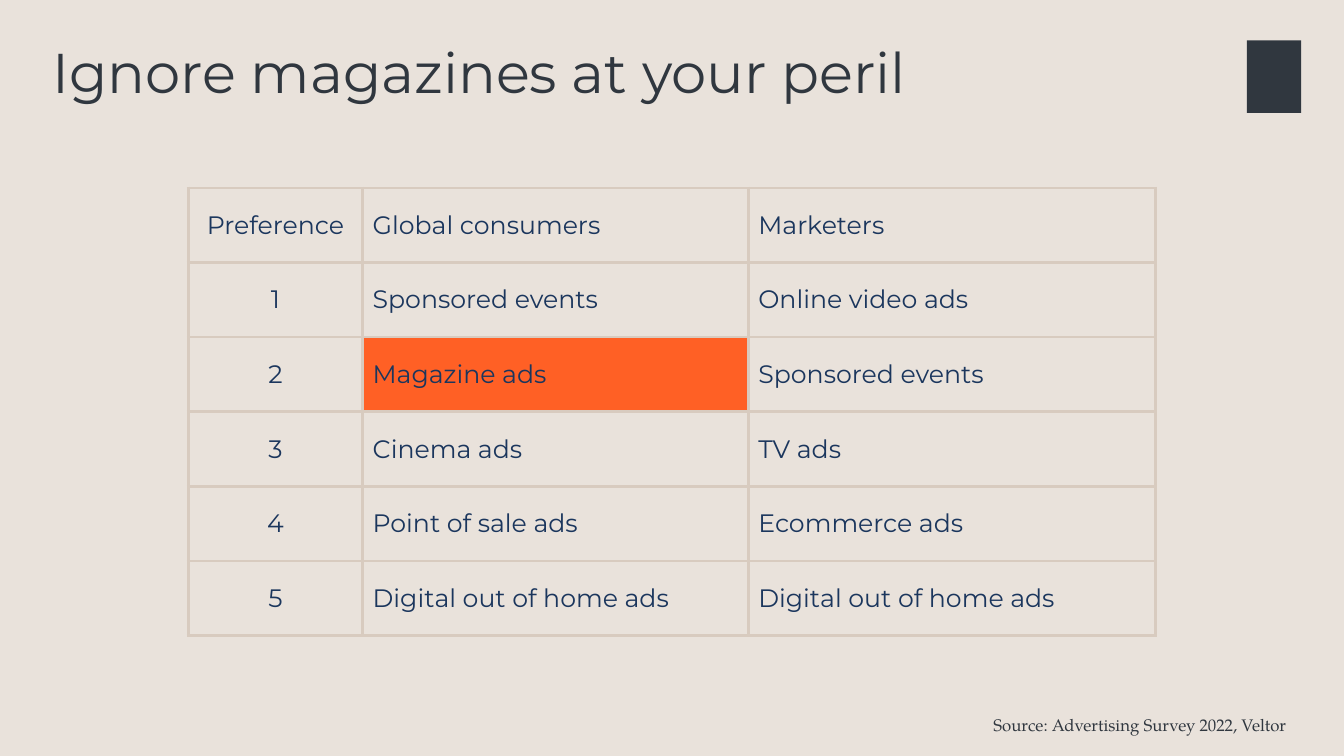
from dataclasses import dataclass

import lxml.etree
import pptx
import pptx.dml.color
import pptx.enum.shapes
import pptx.enum.text
import pptx.oxml.ns
import pptx.presentation
import pptx.slide
import pptx.table
import pptx.text.text
import pptx.util

Pt = pptx.util.Pt
ALIGN = pptx.enum.text.PP_ALIGN
ANCHOR = pptx.enum.text.MSO_ANCHOR

COLORS = {
    "background": "E9E2DB",
    "ink": "30373F",
    "table_text": "1B365D",
    "border": "D8CBBF",
    "highlight": "FF6025",
}
SANS = "Montserrat"
SERIF = "TeX Gyre Pagella"

ROWS = [
    ("Preference", "Global consumers", "Marketers"),
    ("1", "Sponsored events", "Online video ads"),
    ("2", "Magazine ads", "Sponsored events"),
    ("3", "Cinema ads", "TV ads"),
    ("4", "Point of sale ads", "Ecommerce ads"),
    ("5", "Digital out of home ads", "Digital out of home ads"),
]
COLUMN_WIDTHS = (124.5, 275.5, 291)
ROW_HEIGHT = 53.3
HIGHLIGHTED = (2, 1)
BORDER_WIDTH = 2.25


@dataclass(frozen=True)
class TextBox:
    text: str
    left: float
    top: float
    width: float
    height: float
    font: str
    size: float
    align: ALIGN = ALIGN.LEFT
    anchor: ANCHOR = ANCHOR.TOP
    space_before: float = 0
    margin_right: float = 7.2


TEXT_BOXES = [
    TextBox("Ignore magazines at your peril", 30.5, 28.8, 800.6, 104.4, SANS, 40),
    TextBox("Source: Advertising Survey 2022, Veltor", 624.2, 504, 305.3, 29.5, SERIF, 12,
            ALIGN.RIGHT, ANCHOR.MIDDLE, 10, 10.5),
]


def rgb(name: str) -> pptx.dml.color.RGBColor:
    return pptx.dml.color.RGBColor.from_string(COLORS[name])


def format_runs(p: pptx.text.text._Paragraph, font: str, size: float, color: str) -> None:
    for r in p.runs:
        r.font.name = font
        r.font.size = Pt(size)
        r.font.bold = False
        r.font.color.rgb = rgb(color)


def add_text(s: pptx.slide.Slide, box: TextBox) -> None:
    sp = s.shapes.add_textbox(Pt(box.left), Pt(box.top), Pt(box.width), Pt(box.height))
    tf = sp.text_frame
    tf.word_wrap = True
    tf.vertical_anchor = box.anchor
    tf.margin_right = Pt(box.margin_right)
    tf.text = box.text
    p = tf.paragraphs[0]
    p.alignment = box.align
    p.line_spacing = 0.9
    p.space_before = Pt(box.space_before)
    format_runs(p, box.font, box.size, "ink")


def add_borders(cell: pptx.table._Cell) -> None:
    """Line all four sides; must run before the cell fill is set."""
    qn = pptx.oxml.ns.qn
    tc_pr = cell._tc.get_or_add_tcPr()
    for side in ("lnL", "lnR", "lnT", "lnB"):
        ln = lxml.etree.SubElement(tc_pr, qn(f"a:{side}"), w=str(Pt(BORDER_WIDTH)))
        fill = lxml.etree.SubElement(ln, qn("a:solidFill"))
        lxml.etree.SubElement(fill, qn("a:srgbClr"), val=COLORS["border"])


def add_preference_table(s: pptx.slide.Slide) -> None:
    frame = s.shapes.add_table(len(ROWS), len(COLUMN_WIDTHS), Pt(134.5), Pt(134.2),
                               Pt(sum(COLUMN_WIDTHS)), Pt(ROW_HEIGHT * len(ROWS)))
    table = frame.table
    table.first_row = False
    table.horz_banding = False
    for column, width in zip(table.columns, COLUMN_WIDTHS):
        column.width = Pt(width)
    for i, texts in enumerate(ROWS):
        table.rows[i].height = Pt(ROW_HEIGHT)
        for j, text in enumerate(texts):
            cell = table.cell(i, j)
            add_borders(cell)
            if (i, j) == HIGHLIGHTED:
                cell.fill.solid()
                cell.fill.fore_color.rgb = rgb("highlight")
            else:
                cell.fill.background()
            cell.vertical_anchor = ANCHOR.MIDDLE
            cell.text_frame.text = text
            p = cell.text_frame.paragraphs[0]
            p.alignment = ALIGN.CENTER if j == 0 else ALIGN.LEFT
            format_runs(p, SANS, 18, "table_text")


def add_corner_mark(s: pptx.slide.Slide) -> None:
    sp = s.shapes.add_shape(pptx.enum.shapes.MSO_SHAPE.RECTANGLE,
                            Pt(890.6), Pt(28.8), Pt(38.9), Pt(51.8))
    sp.shadow.inherit = False
    sp.fill.solid()
    sp.fill.fore_color.rgb = rgb("ink")
    sp.line.fill.background()


def main() -> None:
    prs = pptx.Presentation()
    prs.slide_width, prs.slide_height = Pt(960), Pt(540)
    s = prs.slides.add_slide(prs.slide_layouts[6])
    s.background.fill.solid()
    s.background.fill.fore_color.rgb = rgb("background")
    add_corner_mark(s)
    for box in TEXT_BOXES:
        add_text(s, box)
    add_preference_table(s)
    prs.save("out.pptx")


if __name__ == "__main__":
    main()
